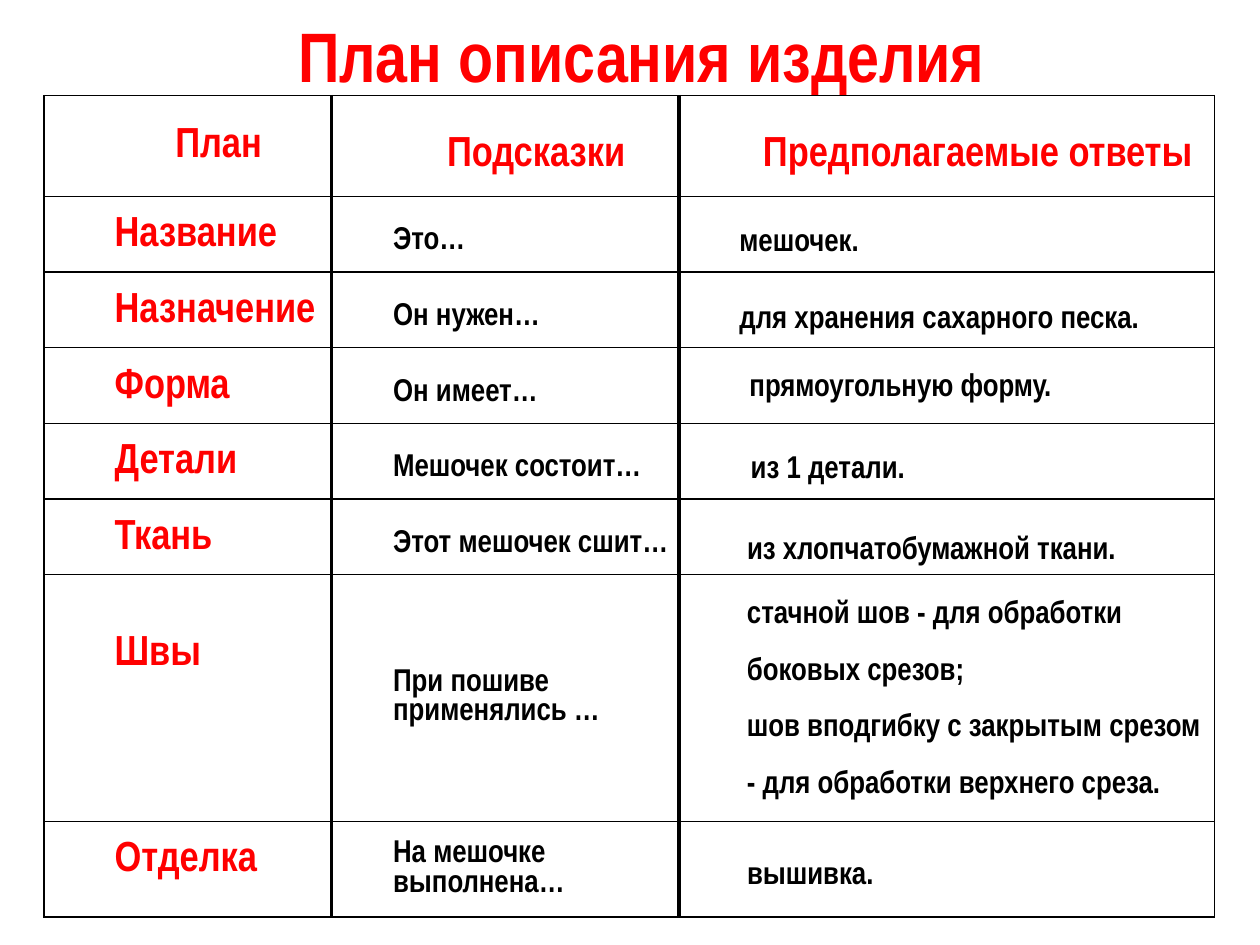
import lxml.etree
import pptx
import pptx.dml.color
import pptx.enum.text
import pptx.oxml.ns
import pptx.util

PX = 9144  # 100 px to the inch
FONT = "Arial Narrow"
COLORS = {"accent": "FF0000", "text": "000000", "border": "000000"}
INDENT = 49
MIDDLE = pptx.enum.text.MSO_ANCHOR.MIDDLE
TOP = pptx.enum.text.MSO_ANCHOR.TOP
CENTER = pptx.enum.text.PP_ALIGN.CENTER

COLUMN_WIDTHS = [228, 276, 425]
ROW_HEIGHTS = [80, 60, 60, 60, 60, 60, 196, 76]
HEADERS = ["План", "Подсказки", "Предполагаемые ответы"]
PLAN = [
    ("Название", "Это…"),
    ("Назначение", "Он нужен…"),
    ("Форма", "Он имеет…"),
    ("Детали", "Мешочек состоит…"),
    ("Ткань", "Этот мешочек сшит…"),
    ("Швы", "При пошиве применялись …"),
    ("Отделка", "На мешочке выполнена…"),
]
# Wording and box (left, top, width, height) relative to the table
ANSWERS = [
    ("мешочек.", (493, 79, 166, 50)),
    ("для хранения сахарного песка.", (493, 140, 391, 50)),
    ("прямоугольную форму.", (501, 194, 317, 50)),
    ("из 1 детали.", (502, 259, 194, 50)),
    ("из хлопчатобумажной ткани.", (499, 323, 368, 50)),
    ("стачной шов - для обработки\nбоковых срезов;\n"
     "шов вподгибку с закрытым срезом\n- для обработки верхнего среза.",
     (499, 374, 447, 186)),
    ("вышивка.", (499, 581, 172, 50)),
]


def emu(*lengths):
    return [pptx.util.Emu(length * PX) for length in lengths]


def write(frame, text, size, color, align=None, spacing=None, hanging=None):
    """Fill a text frame; hanging is (left margin, first-line indent) in px."""
    frame.text = text
    for paragraph in frame.paragraphs:
        paragraph.alignment = align
        paragraph.line_spacing = spacing
        if hanging:
            margin, indent = emu(*hanging)
            properties = paragraph._p.get_or_add_pPr()
            properties.set("marL", str(margin))
            properties.set("indent", str(indent))
        for run in paragraph.runs:
            run.font.name = FONT
            run.font.size = pptx.util.Pt(size)
            run.font.bold = True
            run.font.color.rgb = pptx.dml.color.RGBColor.from_string(COLORS[color])


def set_borders(cell, widths):
    """Draw the cell edges; widths maps L, R, T and B to points."""
    qn = pptx.oxml.ns.qn
    properties = cell._tc.get_or_add_tcPr()
    for side, width in widths.items():
        line = lxml.etree.SubElement(properties, qn(f"a:ln{side}"),
                                     w=str(pptx.util.Pt(width)))
        fill = lxml.etree.SubElement(line, qn("a:solidFill"))
        lxml.etree.SubElement(fill, qn("a:srgbClr"), val=COLORS["border"])


def set_margins(cell, left, top, right, bottom):
    (cell.margin_left, cell.margin_top,
     cell.margin_right, cell.margin_bottom) = emu(left, top, right, bottom)


def add_title(slide, box):
    title = slide.shapes.title
    title.left, title.top, title.width, title.height = emu(*box)
    title.text_frame.vertical_anchor = MIDDLE
    write(title.text_frame, "План описания изделия", 40, "accent", CENTER)


def add_plan_table(slide, box):
    table = slide.shapes.add_table(len(ROW_HEIGHTS), len(COLUMN_WIDTHS),
                                   *emu(*box)).table
    table.first_row = table.horz_banding = False
    for column, width in zip(table.columns, emu(*COLUMN_WIDTHS)):
        column.width = width
    for row, height in zip(table.rows, emu(*ROW_HEIGHTS)):
        row.height = height

    last = len(COLUMN_WIDTHS) - 1
    for row in table.rows:
        for index, cell in enumerate(row.cells):
            set_borders(cell, {"L": 2.25 if index else 1,
                               "R": 2.25 if index < last else 1,
                               "T": 1, "B": 1})
            cell.fill.background()

    for index, header in enumerate(HEADERS):
        cell = table.cell(0, index)
        cell.vertical_anchor = MIDDLE
        set_margins(cell, 7, 0, 7, 0)
        write(cell.text_frame, header, 24, "accent", CENTER,
              1.5 if index else None, (0, INDENT))

    for number, (topic, hint) in enumerate(PLAN, start=1):
        topic_cell, hint_cell = table.cell(number, 0), table.cell(number, 1)
        topic_cell.vertical_anchor = TOP
        set_margins(topic_cell, 7, 32 if topic == "Швы" else 0, 7, 0)
        write(topic_cell.text_frame, topic, 24, "accent",
              spacing=1.5, hanging=(0, INDENT))

        two_lines = ROW_HEIGHTS[number] > 60
        hint_cell.vertical_anchor = MIDDLE
        set_margins(hint_cell, 0, 5, 5, 5)
        write(hint_cell.text_frame, hint, 18, "text",
              spacing=None if two_lines else 1.5,
              hanging=(INDENT, 0) if two_lines else (0, INDENT))


def add_answers(slide, box):
    for answer, (left, top, width, height) in ANSWERS:
        frame = slide.shapes.add_textbox(
            *emu(box[0] + left, box[1] + top, width, height)).text_frame
        frame.word_wrap = False
        frame.auto_size = pptx.enum.text.MSO_AUTO_SIZE.SHAPE_TO_FIT_TEXT
        write(frame, answer, 18, "text", spacing=1.5, hanging=(0, INDENT))


def main():
    presentation = pptx.Presentation()
    presentation.slide_width, presentation.slide_height = emu(1000, 750)
    slide = presentation.slides.add_slide(presentation.slide_layouts[5])
    table_box = (35, 76, sum(COLUMN_WIDTHS), sum(ROW_HEIGHTS))
    add_title(slide, (59, 1, 900, 85))
    add_plan_table(slide, table_box)
    add_answers(slide, table_box)
    presentation.save("out.pptx")


if __name__ == "__main__":
    main()
